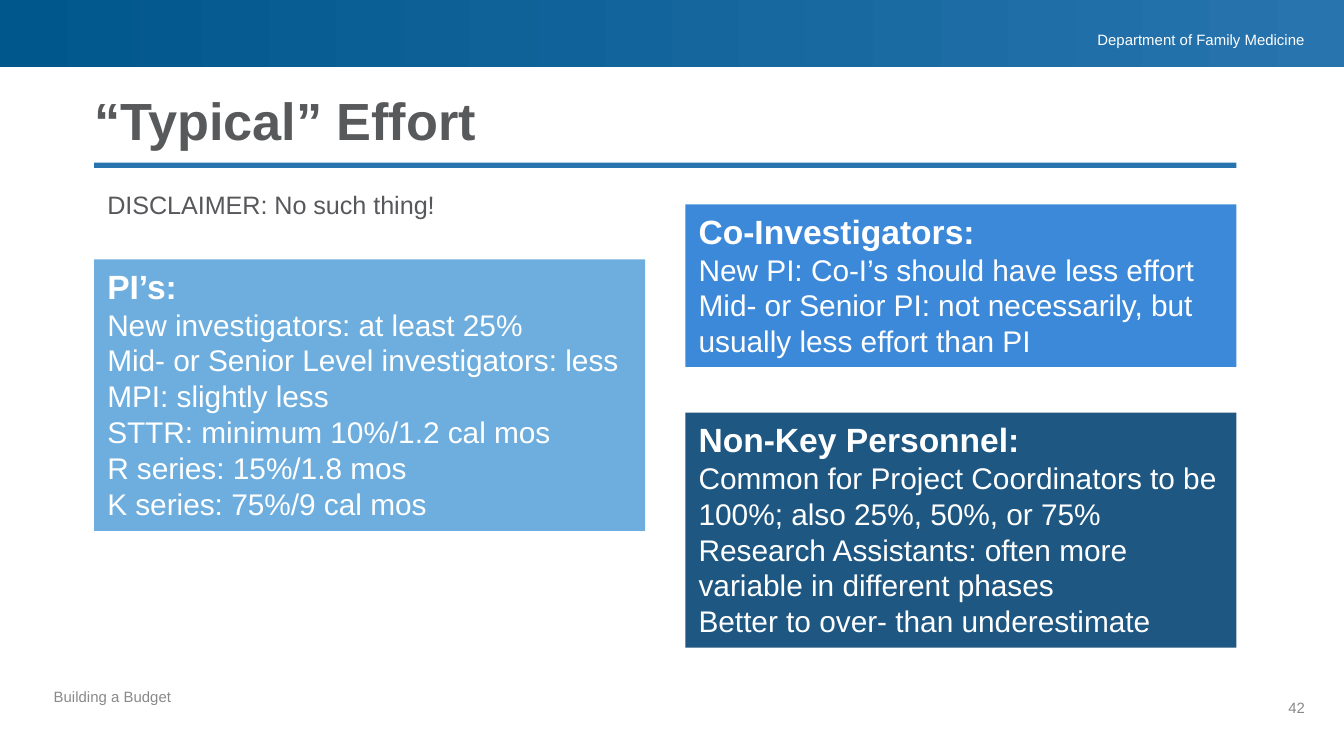
"""Build the "Typical" Effort slide with its three effort panels."""
from dataclasses import dataclass

from pptx import Presentation
from pptx import util as u
from pptx.dml.color import RGBColor
from pptx.enum import shapes, text

COLORS = {
    "banner_start": "00578B", "blue": "2774AE", "light": "6DAEDE",
    "bright": "3D89D9", "dark": "1D5782", "white": "FFFFFF",
    "title": "58595B", "body": "57585B", "footer": "898989",
}
FONT = "Arial"
SLIDE_WIDTH = 10
SLIDE_HEIGHT = SLIDE_WIDTH * 9 / 16
LEFT, CONTENT_WIDTH = 0.7, 8.5
PANEL_WIDTH = 4.1
RIGHT = LEFT + CONTENT_WIDTH - PANEL_WIDTH
PANEL_INSETS = (0.1, 0.05, 0.1, 0.05)
NO_INSETS = (0, 0, 0, 0)


@dataclass
class Box:
    left: float
    top: float
    width: float
    height: float

    def lengths(self) -> list:
        return [u.Inches(v) for v in (self.left, self.top, self.width, self.height)]


@dataclass
class Panel:
    box: Box
    color: str
    heading: str
    lines: list[str]


@dataclass
class Label:
    box: Box
    wording: str
    size: float
    color: str
    insets: tuple = NO_INSETS
    align: text.PP_ALIGN = text.PP_ALIGN.LEFT


PANELS = [
    Panel(Box(LEFT, 1.93, PANEL_WIDTH, 2.02), "light", "PI’s:", [
        "New investigators: at least 25%",
        "Mid- or Senior Level investigators: less",
        "MPI: slightly less",
        "STTR: minimum 10%/1.2 cal mos",
        "R series: 15%/1.8 mos",
        "K series: 75%/9 cal mos",
    ]),
    Panel(Box(RIGHT, 3.07, PANEL_WIDTH, 1.75), "dark", "Non-Key Personnel:", [
        "Common for Project Coordinators to be 100%; also 25%, 50%, or 75%",
        "Research Assistants: often more variable in different phases",
        "Better to over- than underestimate",
    ]),
    Panel(Box(RIGHT, 1.52, PANEL_WIDTH, 1.21), "bright", "Co-Investigators:", [
        "New PI: Co-I’s should have less effort",
        "Mid- or Senior PI: not necessarily, but usually less effort than PI",
    ]),
]
LABELS = [
    Label(Box(7.2, 0.22, 2.51, 0.14), "Department of Family Medicine", 8, "white",
          (0.1, 0.01, 0, 0.01), text.PP_ALIGN.RIGHT),
    Label(Box(0.4, 5.12, 3.9, 0.4), "Building a Budget", 8, "footer"),
    Label(Box(9.21, 5.2, 0.5, 0.4), "42", 8, "footer", align=text.PP_ALIGN.RIGHT),
    Label(Box(LEFT, 1.36, CONTENT_WIDTH, 0.33), "DISCLAIMER: No such thing!", 13.5,
          "body", PANEL_INSETS),
]


def apply(target, values: dict) -> None:
    for name, value in values.items():
        setattr(target, name, value)


def rgb(color: str) -> RGBColor:
    return RGBColor.from_string(COLORS[color])


def format_frame(frame, insets: tuple, anchor=text.MSO_ANCHOR.TOP) -> None:
    left, top, right, bottom = (u.Inches(v) for v in insets)
    apply(frame, {
        "word_wrap": True, "auto_size": text.MSO_AUTO_SIZE.NONE,
        "vertical_anchor": anchor, "margin_left": left, "margin_top": top,
        "margin_right": right, "margin_bottom": bottom,
    })


def write(paragraph, wording: str, size: float, color: str, bold: bool = False,
          align=text.PP_ALIGN.LEFT) -> None:
    paragraph.text = wording
    paragraph.alignment = align
    apply(paragraph.font, {"name": FONT, "size": u.Pt(size), "bold": bold})
    paragraph.font.color.rgb = rgb(color)


def add_rectangle(slide, box: Box, color: str):
    shape = slide.shapes.add_shape(shapes.MSO_SHAPE.RECTANGLE, *box.lengths())
    shape.shadow.inherit = False
    shape.line.fill.background()
    shape.fill.solid()
    shape.fill.fore_color.rgb = rgb(color)
    return shape


def add_banner(slide) -> None:
    fill = add_rectangle(slide, Box(0, 0, SLIDE_WIDTH, 0.5), "blue").fill
    fill.gradient()
    fill.gradient_angle = 0
    for stop, color, position in zip(fill.gradient_stops, ("banner_start", "blue"), (0, 1)):
        stop.color.rgb = rgb(color)
        stop.position = position


def add_title(slide, wording: str) -> None:
    title = slide.shapes.title
    left, top, width, height = Box(LEFT, 0.7, CONTENT_WIDTH, 0.43).lengths()
    apply(title, {"left": left, "top": top, "width": width, "height": height})
    format_frame(title.text_frame, NO_INSETS, text.MSO_ANCHOR.BOTTOM)
    paragraph = title.text_frame.paragraphs[0]
    write(paragraph, wording, 28, "title", bold=True)
    paragraph.line_spacing = 0.9


def add_label(slide, label: Label) -> None:
    frame = slide.shapes.add_textbox(*label.box.lengths()).text_frame
    format_frame(frame, label.insets)
    write(frame.paragraphs[0], label.wording, label.size, label.color, align=label.align)


def add_panel(slide, panel: Panel) -> None:
    frame = add_rectangle(slide, panel.box, panel.color).text_frame
    format_frame(frame, PANEL_INSETS)
    write(frame.paragraphs[0], panel.heading, 18, "white", bold=True)
    for line in panel.lines:
        write(frame.add_paragraph(), line, 16, "white")


def main() -> None:
    presentation = Presentation()
    presentation.slide_width = u.Inches(SLIDE_WIDTH)
    presentation.slide_height = u.Inches(SLIDE_HEIGHT)
    slide = presentation.slides.add_slide(presentation.slide_layouts[5])
    add_rectangle(slide, Box(LEFT, 1.21, CONTENT_WIDTH, 0.04), "blue")
    add_banner(slide)
    add_title(slide, "“Typical” Effort")
    for panel in PANELS:
        add_panel(slide, panel)
    for label in LABELS:
        add_label(slide, label)
    presentation.save("out.pptx")


if __name__ == "__main__":
    main()
